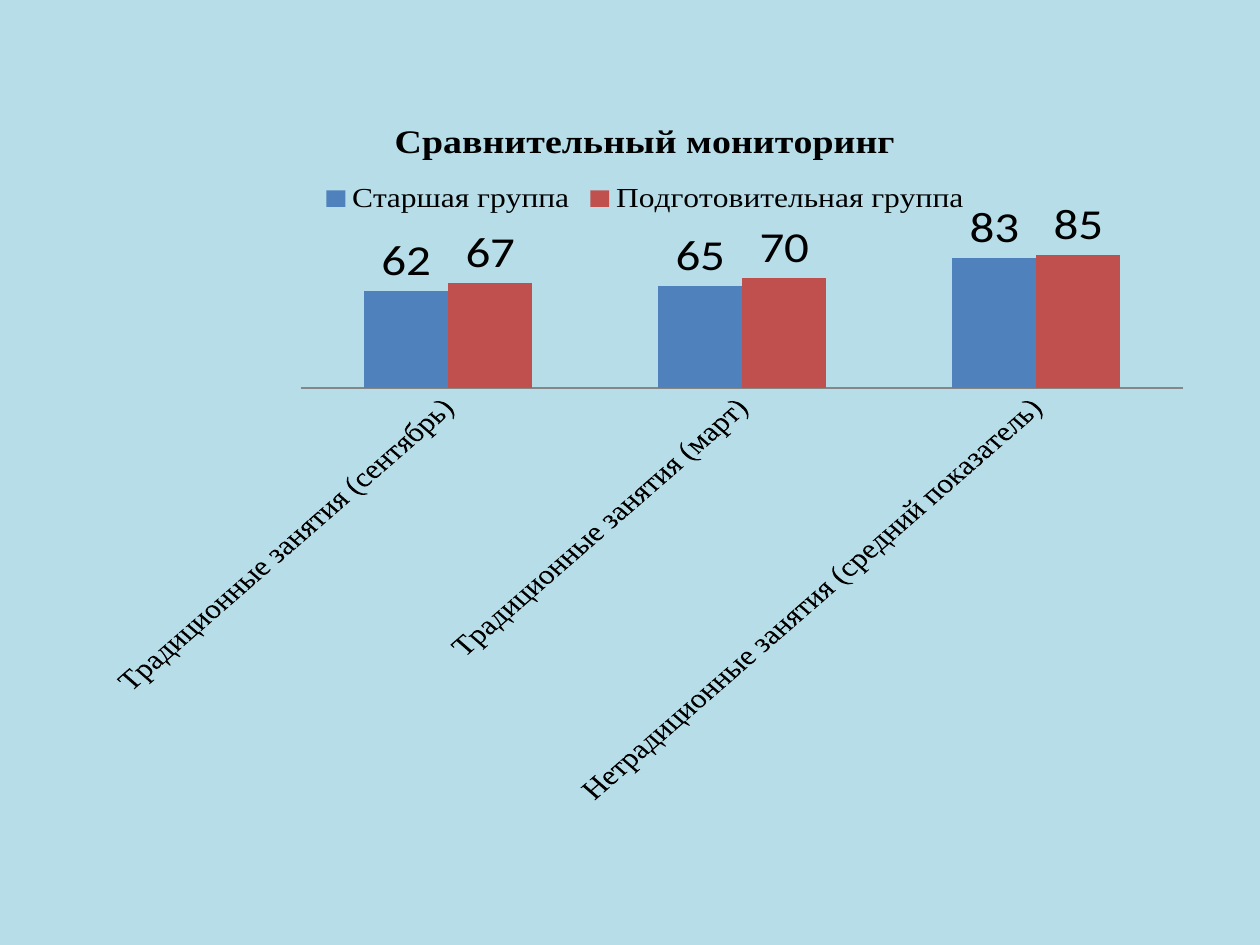
import pptx
import pptx.chart.data
import pptx.dml.color
import pptx.enum.chart
import pptx.util
from pptx.util import Inches

COLORS = {"bg": "B7DEE8", "text": "000000", "axis": "868686",
          "senior": "4F81BD", "prep": "C0504D"}
CATEGORIES = ["Традиционные занятия (сентябрь)",
              "Традиционные занятия (март)",
              "Нетрадиционные занятия (средний показатель)"]
SERIES = [("Старшая группа", (62, 65, 83), "senior"),
          ("Подготовительная группа", (67, 70, 85), "prep")]
SERIF = "Times New Roman"


def rgb(name):
    """Return the named colour."""
    return pptx.dml.color.RGBColor.from_string(COLORS[name])


def style_font(font, size, name, bold=False):
    """Set size, typeface, weight and text colour of a font."""
    font.size = pptx.util.Pt(size)
    font.name = name
    font.bold = bold
    font.color.rgb = rgb("text")


def add_title(chart, text):
    """Give the chart a bold title."""
    chart.has_title = True
    tf = chart.chart_title.text_frame
    r = tf.paragraphs[0].add_run()
    r.text = text
    style_font(r.font, 21.6, SERIF, bold=True)
    chart.chart_title.include_in_layout = False


def add_legend(chart):
    """Place the legend above the columns."""
    chart.has_legend = True
    chart.legend.position = pptx.enum.chart.XL_LEGEND_POSITION.TOP
    chart.legend.include_in_layout = False
    style_font(chart.legend.font, 18, SERIF)


def style_axes(chart):
    """Show slanted category labels and hide the value axis."""
    cat, val = chart.category_axis, chart.value_axis
    none = pptx.enum.chart.XL_TICK_MARK.NONE
    cat.major_tick_mark = none
    cat.minor_tick_mark = none
    cat.format.line.color.rgb = rgb("axis")
    style_font(cat.tick_labels.font, 18, SERIF)
    val.minimum_scale = 0
    val.maximum_scale = 100
    val.has_major_gridlines = False
    val.visible = False


def style_series(series, color):
    """Colour a series and show its values above the columns."""
    series.format.fill.solid()
    series.format.fill.fore_color.rgb = rgb(color)
    labels = series.data_labels
    labels.show_value = True
    labels.position = pptx.enum.chart.XL_LABEL_POSITION.OUTSIDE_END
    style_font(labels.font, 28, "Calibri")


def add_column_chart(s):
    """Add the chart comparing both groups."""
    data = pptx.chart.data.CategoryChartData()
    data.categories = CATEGORIES
    for name, values, _ in SERIES:
        data.add_series(name, values)
    chart = s.shapes.add_chart(
        pptx.enum.chart.XL_CHART_TYPE.COLUMN_CLUSTERED,
        Inches(0.67), Inches(0.76), Inches(8.9), Inches(5.63), data).chart
    style_font(chart.font, 18, "Calibri")
    add_title(chart, "Сравнительный мониторинг")
    add_legend(chart)
    style_axes(chart)
    plot = chart.plots[0]
    plot.vary_by_categories = False
    plot.gap_width = 150
    plot.overlap = 0
    for series, (_, _, color) in zip(plot.series, SERIES):
        style_series(series, color)


def main():
    """Build and save the slide."""
    prs = pptx.Presentation()
    prs.slide_width, prs.slide_height = Inches(10), Inches(7.5)
    s = prs.slides.add_slide(prs.slide_layouts[6])
    s.background.fill.solid()
    s.background.fill.fore_color.rgb = rgb("bg")
    add_column_chart(s)
    prs.save("out.pptx")


if __name__ == "__main__":
    main()
